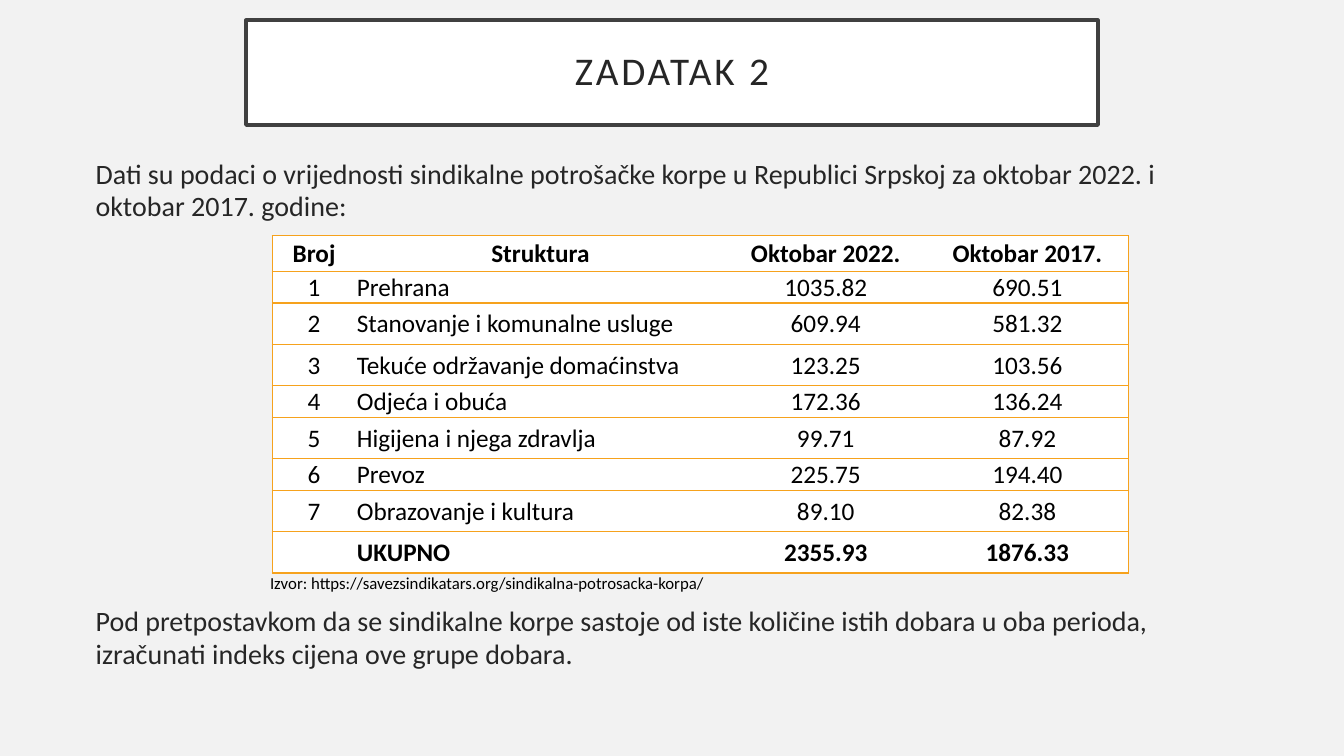
import pptx
import pptx.util
import pptx.dml.color
import pptx.enum.text
import pptx.oxml.ns
from lxml import etree

Inches = pptx.util.Inches
Pt = pptx.util.Pt
ALIGN = pptx.enum.text.PP_ALIGN
MIDDLE = pptx.enum.text.MSO_ANCHOR.MIDDLE

COLORS = {
    "background": "F2F2F2",
    "white": "FFFFFF",
    "frame": "404040",
    "body": "262626",
    "black": "000000",
    "border": "F6A21D",
}
FONT = "Calibri"
TITLE = "ZADATAK 2"
TEXTS = [
    ("Dati su podaci o vrijednosti sindikalne potrošačke korpe u Republici Srpskoj "
     "za oktobar 2022. i oktobar 2017. godine:", (0.85, 1.52, 11.4, 0.8), 20, "body", 0.97),
    ("Pod pretpostavkom da se sindikalne korpe sastoje od iste količine istih dobara "
     "u oba perioda, izračunati indeks cijena ove grupe dobara.",
     (0.85, 5.96, 11.4, 0.8), 20, "body", 0.97),
    ("Izvor: https://savezsindikatars.org/sindikalna-potrosacka-korpa/",
     (2.58, 5.63, 4.92, 0.3), 12, "black", 1.0),
]
ROWS = [
    ("Broj", "Struktura", "Oktobar 2022.", "Oktobar 2017."),
    ("1", "Prehrana", "1035.82", "690.51"),
    ("2", "Stanovanje i komunalne usluge", "609.94", "581.32"),
    ("3", "Tekuće održavanje domaćinstva", "123.25", "103.56"),
    ("4", "Odjeća i obuća", "172.36", "136.24"),
    ("5", "Higijena i njega zdravlja", "99.71", "87.92"),
    ("6", "Prevoz", "225.75", "194.40"),
    ("7", "Obrazovanje i kultura", "89.10", "82.38"),
    ("", "UKUPNO", "2355.93", "1876.33"),
]
COLUMN_WIDTHS = [0.83, 3.66, 2, 2]
ROW_HEIGHTS = [0.35, 0.31, 0.41, 0.41, 0.31, 0.41, 0.31, 0.41, 0.41]


def color(name):
    return pptx.dml.color.RGBColor.from_string(COLORS[name])


def set_font(paragraph, size, color_name, bold=False):
    paragraph.font.name = FONT
    paragraph.font.size = Pt(size)
    paragraph.font.bold = bold
    paragraph.font.color.rgb = color(color_name)


def add_borders(cell, visible_sides):
    properties = cell._tc.get_or_add_tcPr()
    qn = pptx.oxml.ns.qn
    for index, side in enumerate(("L", "R", "T", "B")):
        line = etree.Element(qn("a:ln" + side), w=str(Pt(1)))
        if side in visible_sides:
            fill = etree.SubElement(line, qn("a:solidFill"))
            etree.SubElement(fill, qn("a:srgbClr"), val=COLORS["border"])
        else:
            etree.SubElement(line, qn("a:noFill"))
        properties.insert(index, line)


def add_title(slide):
    title = slide.shapes.title
    title.left, title.top = Inches(2.44), Inches(0.2)
    title.width, title.height = Inches(8.45), Inches(1.04)
    title.fill.solid()
    title.fill.fore_color.rgb = color("white")
    title.line.color.rgb = color("frame")
    title.line.width = Pt(2.5)
    frame = title.text_frame
    frame.text = TITLE
    frame.vertical_anchor = MIDDLE
    frame.margin_left = frame.margin_right = Inches(0.2)
    frame.margin_top = frame.margin_bottom = Inches(0.2)
    paragraph = frame.paragraphs[0]
    paragraph.alignment = ALIGN.CENTER
    paragraph.line_spacing = 0.9
    set_font(paragraph, 28, "body")
    paragraph.runs[0]._r.get_or_add_rPr().set("spc", "200")


def add_text(slide, text, place, size, color_name, line_spacing):
    frame = slide.shapes.add_textbox(*map(Inches, place)).text_frame
    frame.word_wrap = True
    frame.text = text
    paragraph = frame.paragraphs[0]
    paragraph.line_spacing = line_spacing
    set_font(paragraph, size, color_name)


def add_basket_table(slide):
    table = slide.shapes.add_table(
        len(ROWS), len(COLUMN_WIDTHS), Inches(2.7), Inches(2.34),
        Inches(sum(COLUMN_WIDTHS)), Inches(sum(ROW_HEIGHTS))).table
    table.first_row = table.horz_banding = False
    for column, width in zip(table.columns, COLUMN_WIDTHS):
        column.width = Inches(width)
    last_column = len(COLUMN_WIDTHS) - 1
    for row_index, values in enumerate(ROWS):
        table.rows[row_index].height = Inches(ROW_HEIGHTS[row_index])
        header = row_index == 0
        bold = header or row_index == len(ROWS) - 1
        for column_index, value in enumerate(values):
            cell = table.cell(row_index, column_index)
            cell.text = value
            cell.vertical_anchor = MIDDLE
            cell.margin_left = cell.margin_right = cell.margin_top = Inches(0.01)
            cell.margin_bottom = 0
            cell.fill.solid()
            cell.fill.fore_color.rgb = color("white")
            paragraph = cell.text_frame.paragraphs[0]
            left = column_index == 1 and not header
            paragraph.alignment = ALIGN.LEFT if left else ALIGN.CENTER
            set_font(paragraph, 18, "black", bold)
            sides = "TB" + {0: "L", last_column: "R"}.get(column_index, "")
            add_borders(cell, sides)


def main():
    presentation = pptx.Presentation()
    presentation.slide_width = Inches(13.33)
    presentation.slide_height = Inches(7.5)
    slide = presentation.slides.add_slide(presentation.slide_layouts[5])
    slide.background.fill.solid()
    slide.background.fill.fore_color.rgb = color("background")
    add_title(slide)
    add_basket_table(slide)
    for text in TEXTS:
        add_text(slide, *text)
    presentation.save("out.pptx")


if __name__ == "__main__":
    main()
